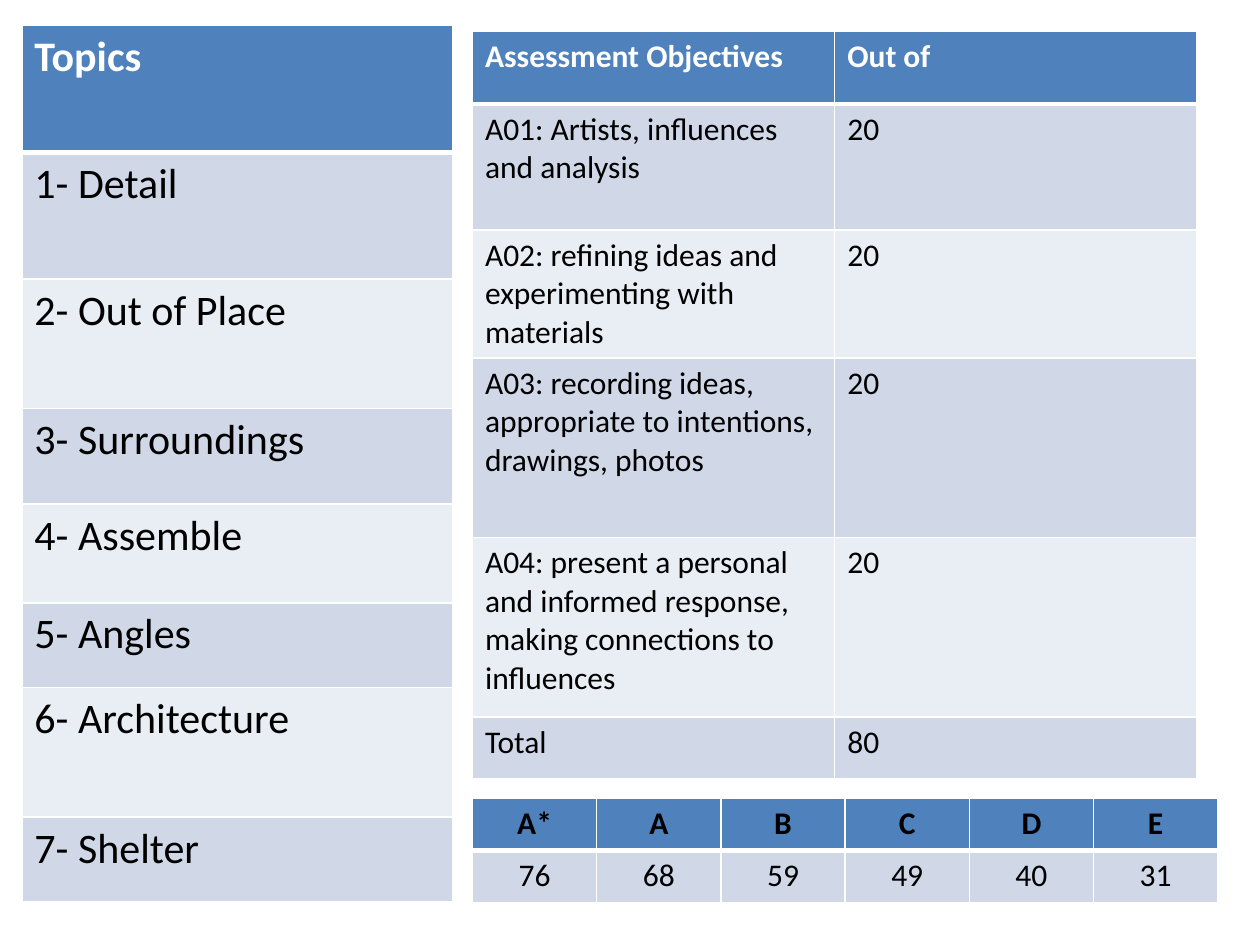
from lxml.etree import SubElement
from pptx import Presentation
from pptx.dml.color import RGBColor
from pptx.enum.text import PP_ALIGN as Align
from pptx.oxml.ns import qn
from pptx.util import Pt

BLUE = RGBColor(0x4F, 0x81, 0xBD)
BAND_DARK = RGBColor(0xD0, 0xD8, 0xE8)
BAND_LIGHT = RGBColor(0xE9, 0xED, 0xF4)
WHITE = RGBColor(0xFF, 0xFF, 0xFF)
BLACK = RGBColor(0x00, 0x00, 0x00)

TOPICS = ["Topics", "1- Detail", "2- Out of Place", "3- Surroundings",
          "4- Assemble", "5- Angles", "6- Architecture", "7- Shelter"]
OBJECTIVES = [
    ("Assessment Objectives", "Out of"),
    ("A01: Artists, influences and analysis", "20"),
    ("A02: refining ideas and experimenting with materials", "20"),
    ("A03: recording ideas, appropriate to intentions, drawings, photos", "20"),
    ("A04: present a personal and informed response, "
     "making connections to influences", "20"),
    ("Total", "80"),
]
GRADES = [("A*", "A", "B", "C", "D", "E"),
          ("76", "68", "59", "49", "40", "31")]


def set_borders(cell, row):
    """Draw white rules, with a heavy one between header and body."""
    tc_pr = cell._tc.get_or_add_tcPr()
    widths = {"lnL": 1, "lnR": 1, "lnT": 3 if row == 1 else 1,
              "lnB": 3 if row == 0 else 1}
    for tag, width in widths.items():
        ln = SubElement(tc_pr, qn(f"a:{tag}"), w=str(Pt(width)))
        fill = SubElement(ln, qn("a:solidFill"))
        SubElement(fill, qn("a:srgbClr"), val=str(WHITE))


def set_fill(cell, row):
    cell.fill.solid()
    band = BAND_DARK if row % 2 else BAND_LIGHT
    cell.fill.fore_color.rgb = band if row else BLUE


def set_text(cell, text, size, color, bold, align):
    p = cell.text_frame.paragraphs[0]
    p.alignment = align
    r = p.add_run()
    r.text = text
    for name, value in {"name": "Calibri", "size": Pt(size), "bold": bold}.items():
        setattr(r.font, name, value)
    r.font.color.rgb = color


def add_banded_table(s, left, top, col_width, heights, rows, size,
                     head_color=WHITE, align=Align.LEFT):
    n_cols = len(rows[0])
    table = s.shapes.add_table(len(rows), n_cols, Pt(left), Pt(top),
                               Pt(col_width * n_cols), Pt(sum(heights))).table
    for col in table.columns:
        col.width = Pt(col_width)
    for i, (height, texts) in enumerate(zip(heights, rows)):
        table.rows[i].height = Pt(height)
        for j, text in enumerate(texts):
            cell = table.cell(i, j)
            set_borders(cell, i)
            set_fill(cell, i)
            set_text(cell, text, size, BLACK if i else head_color, i == 0, align)


def main():
    prs = Presentation()
    prs.slide_width, prs.slide_height = Pt(720), Pt(540)
    s = prs.slides.add_slide(prs.slide_layouts[6])

    add_banded_table(s, 12.5, 14.5, 246, [72.5, 72.5, 74, 54.5, 56.5, 48.5, 74, 48.5],
                     [(topic,) for topic in TOPICS], 24)
    add_banded_table(s, 270, 18, 207, [41.5, 72, 72, 102.5, 102.5, 35.5],
                     OBJECTIVES, 18)
    add_banded_table(s, 270, 456, 71, [30, 30], GRADES, 18,
                     head_color=BLACK, align=Align.CENTER)
    prs.save("out.pptx")


if __name__ == "__main__":
    main()
